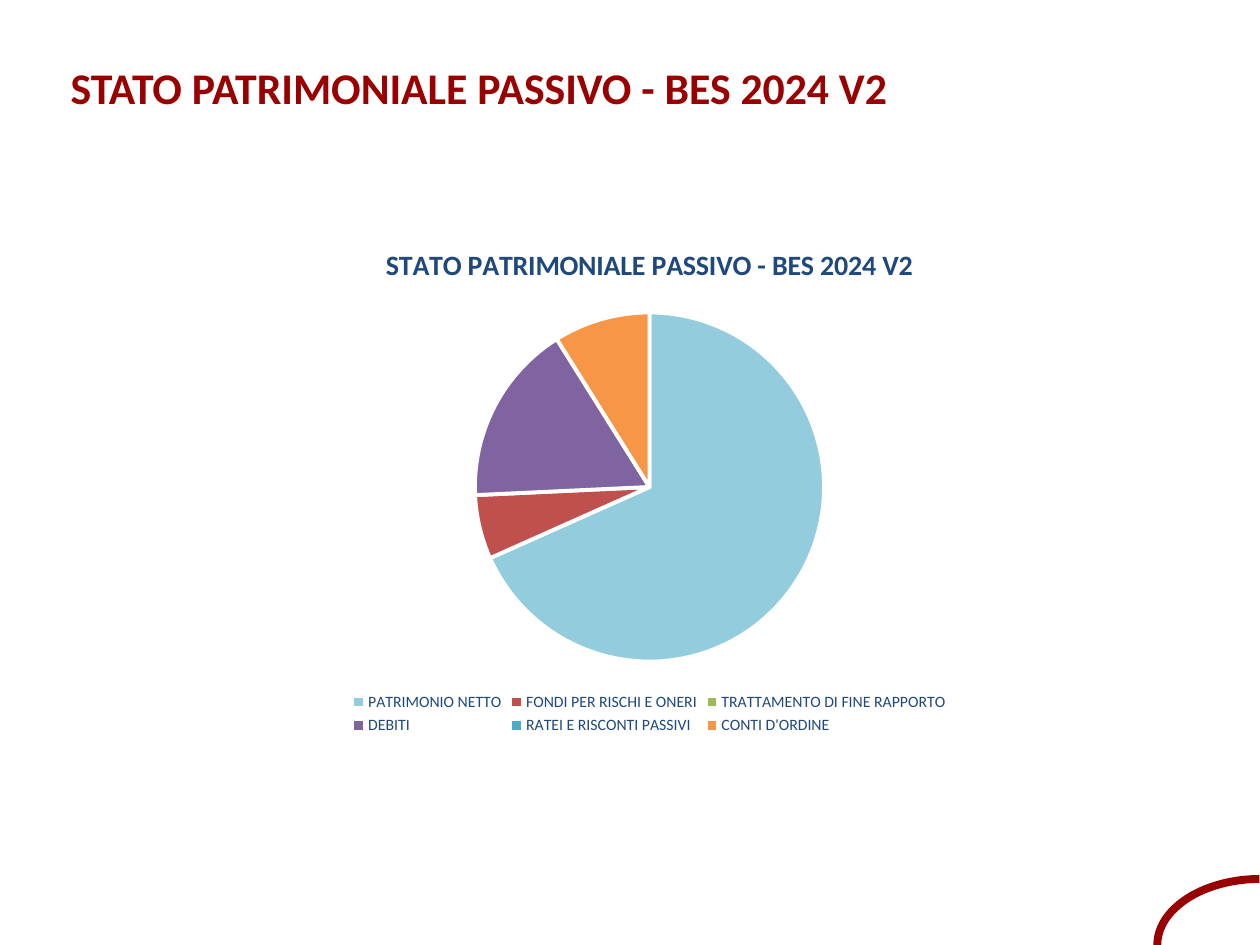
"""Build a slide with a pie chart of the liabilities side of a balance sheet."""
from typing import NamedTuple

from lxml import etree
from pptx import Presentation
from pptx import util as u
from pptx.chart import data
from pptx.dml.color import RGBColor
from pptx.enum import chart as ch, shapes, text
from pptx.oxml.ns import qn

PX = 9144
RED, NAVY, WHITE = "990000", "1F497D", "FFFFFF"
HEAD = "STATO PATRIMONIALE PASSIVO - BES 2024 V2"


class Box(NamedTuple):
    x: int
    y: int
    w: int
    h: int

    def emu(self) -> list:
        return [v * PX for v in self]


class Slice(NamedTuple):
    name: str
    val: int
    hue: str


SLICES = [
    Slice("PATRIMONIO NETTO", 69, "93CDDD"),
    Slice("FONDI PER RISCHI E ONERI", 6, "C0504D"),
    Slice("TRATTAMENTO DI FINE RAPPORTO", 0, "9BBB59"),
    Slice("DEBITI", 17, "8064A2"),
    Slice("RATEI E RISCONTI PASSIVI", 0, "4BACC6"),
    Slice("CONTI D'ORDINE", 9, "F79646"),
]


def rgb(hue: str) -> RGBColor:
    return RGBColor.from_string(hue)


def put(obj, **vals) -> None:
    for key, val in vals.items():
        setattr(obj, key, val)


def style(font, size: int, hue: str, bold: bool = False) -> None:
    put(font, name="Calibri", size=u.Pt(size), bold=bold)
    font.color.rgb = rgb(hue)


def paint(fill, hue: str) -> None:
    fill.solid()
    fill.fore_color.rgb = rgb(hue)


def draw_arc(slide, box: Box) -> None:
    arc = slide.shapes.add_shape(shapes.MSO_SHAPE.ARC, *box.emu())
    arc.adjustments[0], arc.adjustments[1] = 162, 215.34
    arc.rotation = 270
    arc.shadow.inherit = False
    arc.fill.background()
    arc.line.color.rgb = rgb(RED)
    arc.line.width = u.Pt(4.5)


def draw_title(slide, box: Box) -> None:
    head = slide.shapes.title
    x, y, w, h = box.emu()
    put(head, left=x, top=y, width=w, height=h)
    paint(head.fill, WHITE)
    tint = head.fill._xPr.find(".//" + qn("a:srgbClr"))
    etree.SubElement(tint, qn("a:alpha"), val="50000")
    frame = head.text_frame
    put(frame, text=HEAD, word_wrap=True, auto_size=text.MSO_AUTO_SIZE.NONE,
        vertical_anchor=text.MSO_ANCHOR.TOP, margin_left=9 * PX,
        margin_top=8 * PX, margin_right=0, margin_bottom=4 * PX)
    para = frame.paragraphs[0]
    put(para, alignment=text.PP_ALIGN.LEFT, line_spacing=0.93)
    props = para._p.get_or_add_pPr()
    props.set("marL", str(47 * PX))
    props.set("indent", "0")
    style(para.runs[0].font, 25, RED, True)


def place_plot(chart, **part: float) -> None:
    plot = chart._chartSpace.find(".//" + qn("c:plotArea"))
    for old in plot.findall(qn("c:layout")):
        plot.remove(old)
    area = etree.Element(qn("c:layout"))
    plot.insert(0, area)
    manual = etree.SubElement(area, qn("c:manualLayout"))
    vals = dict(layoutTarget="inner", xMode="edge", yMode="edge", **part)
    for key, val in vals.items():
        etree.SubElement(manual, qn(f"c:{key}"), val=str(val))


def draw_pie(slide, box: Box, parts: list) -> None:
    src = data.CategoryChartData()
    src.categories = [p.name for p in parts]
    src.add_series("Series 1", [p.val for p in parts])
    kind = ch.XL_CHART_TYPE.PIE
    chart = slide.shapes.add_chart(kind, *box.emu(), src).chart
    style(chart.font, 10, "000000")
    put(chart, has_title=True, has_legend=True)
    frame = chart.chart_title.text_frame
    frame.text = HEAD
    style(frame.paragraphs[0].runs[0].font, 16, NAVY, True)
    put(chart.legend, position=ch.XL_LEGEND_POSITION.BOTTOM,
        include_in_layout=False)
    style(chart.legend.font, 9, NAVY)
    plot = chart.plots[0]
    plot.vary_by_categories = True
    for i, part in enumerate(parts):
        form = plot.series[0].points[i].format
        paint(form.fill, part.hue)
        form.line.color.rgb = rgb(WHITE)
        form.line.width = u.Pt(2.25)
    place_plot(chart, x=0.3, y=0.17, w=0.4, h=0.68)


def main() -> None:
    deck = Presentation()
    put(deck, slide_width=1000 * PX, slide_height=750 * PX)
    slide = deck.slides.add_slide(deck.slide_layouts[5])
    draw_arc(slide, Box(948, 668, 105, 164))
    draw_title(slide, Box(0, 44, 943, 80))
    draw_pie(slide, Box(169, 178, 693, 409), SLICES)
    deck.save("out.pptx")


if __name__ == "__main__":
    main()
